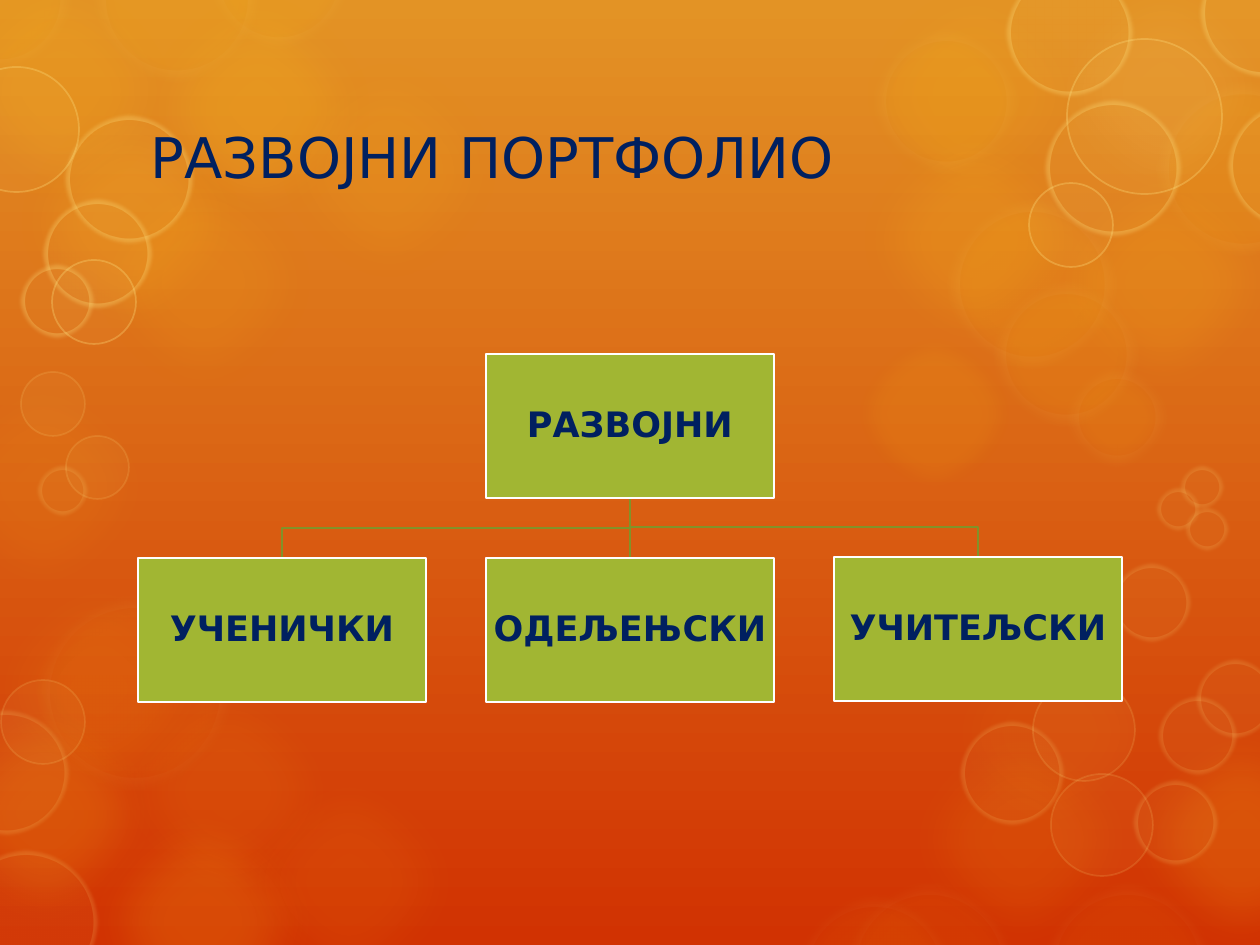
from lxml import etree
from pptx import Presentation
from pptx.dml.color import RGBColor
from pptx.enum.shapes import MSO_CONNECTOR, MSO_SHAPE
from pptx.enum.text import MSO_ANCHOR, MSO_AUTO_SIZE, PP_ALIGN
from pptx.oxml.ns import qn
from pptx.util import Pt

STRAIGHT = MSO_CONNECTOR.STRAIGHT
ELLIPSE, RECTANGLE = MSO_SHAPE.OVAL, MSO_SHAPE.RECTANGLE
LEFT, CENTER = PP_ALIGN.LEFT, PP_ALIGN.CENTER
MIDDLE = MSO_ANCHOR.MIDDLE
NO_AUTOFIT = MSO_AUTO_SIZE.NONE

PX = 7257  # EMU per pixel at 126 px to the inch
FONT = "DejaVu Sans"
NAVY, GREEN, OLIVE, WHITE = "002060", "A1B633", "819229", "FFFFFF"
AMBER, YELLOW, CREAM = "FDC61B", "FFE281", "FEEBAE"
rgb = RGBColor.from_string

GLOW = 263  # diameter of the large soft circles

# fill, fill opacity %, line, line width, line opacity %, soft edge in EMU,
# circles as (left, top, diameter)
BUBBLES = [
    (AMBER, 8, None, 0, 0, 317500,
     [(-32, 557, GLOW), (97, 660, GLOW), (218, 751, GLOW), (-88, 355, GLOW)]),
    (AMBER, 10, None, 0, 0, 317500,
     [(72, 151, GLOW), (258, 39, GLOW), (843, -37, GLOW), (890, 708, GLOW)]),
    (AMBER, 16, None, 0, 0, 317500,
     [(72, 790, GLOW), (1110, 708, GLOW), (-86, 682, GLOW)]),
    (AMBER, 14, None, 0, 0, 317500, [(-70, -41, GLOW)]),
    (AMBER, 20, None, 0, 0, 317500, [(127, -23, GLOW)]),
    (YELLOW, 10, None, 0, 0, 317500, [(1033, -41, GLOW)]),
    (AMBER, 15, None, 0, 0, 317500,
     [(0, 91, GLOW), (1033, 151, GLOW), (843, 108, GLOW)]),
    (AMBER, 5, None, 0, 0, 317500, [(919, 601, GLOW)]),
    (AMBER, 10, CREAM, 14, 6, 127000,
     [(1157, 82, 173), (874, 29, 144), (948, 200, 168), (994, 282, 144),
      (1067, 367, 100), (94, -83, 165), (207, -95, 144), (-72, -73, 144)]),
    (AMBER, 6, CREAM, 14, 4, 127000,
     [(38, 596, 193), (795, 895, 159), (844, 883, 171), (1043, 883, 169)]),
    (YELLOW, 5, YELLOW, 1, 15, 0,
     [(1, 680, 84), (1051, 774, 102), (1033, 679, 102), (21, 372, 64),
      (66, 436, 63)]),
    (YELLOW, 5, YELLOW, 1, 30, 0,
     [(-46, 67, 125), (52, 260, 84), (1067, 39, 155), (1029, 183, 84)]),
    (YELLOW, 5, YELLOW, 5, 15, 31750,
     [(-45, 851, 142), (-55, 711, 123), (961, 722, 102), (1134, 781, 83),
      (1113, 564, 77), (1159, 697, 77), (1197, 660, 77), (1181, 466, 42),
      (1157, 488, 42), (1186, 508, 42), (38, 466, 49)]),
    (YELLOW, 5, YELLOW, 5, 30, 31750,
     [(66, 116, 126), (44, 200, 107), (21, 265, 72), (1007, -30, 125),
      (1201, -50, 126), (1229, 103, 125), (1046, 101, 134)]),
    (AMBER, 10, None, 0, 0, 127000, [(850, 330, 168)]),
]


def set_opacity(fill, percent):
    color = fill._xPr.find(qn("a:solidFill"))[0]
    etree.SubElement(color, qn("a:alpha"), val=str(percent * 1000))


def add_run(paragraph, text, size, bold=False):
    run = paragraph.add_run()
    run.text = text
    run.font.name = FONT
    run.font.size = Pt(size)
    run.font.bold = bold
    run.font.color.rgb = rgb(NAVY)


prs = Presentation()
prs.slide_width, prs.slide_height = 1260 * PX, 945 * PX
layout = prs.slide_layouts[5]
slide = prs.slides.add_slide(layout)
shapes = slide.shapes

backdrop = slide.background.fill
backdrop.gradient()
backdrop.gradient_angle = 270
for stop, color in zip(backdrop.gradient_stops, ("E39325", "D13202")):
    stop.color.rgb = rgb(color)

# Bubbles belong to the layout, behind the slide's own content
bubble_id = 100
for fill, opacity, line, width, line_opacity, soft_edge, circles in BUBBLES:
    for left, top, size in circles:
        bubble = shapes.add_shape(ELLIPSE, left * PX, top * PX, size * PX, size * PX)
        bubble.fill.solid()
        bubble.fill.fore_color.rgb = rgb(fill)
        set_opacity(bubble.fill, opacity)
        if line:
            bubble.line.width = Pt(width)
            bubble.line.color.rgb = rgb(line)
            set_opacity(bubble.line.fill, line_opacity)
        else:
            bubble.line.fill.background()
        bubble.shadow.inherit = False
        if soft_edge:
            effects = bubble._element.spPr.find(qn("a:effectLst"))
            etree.SubElement(effects, qn("a:softEdge"), rad=str(soft_edge))
        bubble._element.nvSpPr.cNvPr.set("id", str(bubble_id))
        layout.shapes._spTree.append(bubble._element)
        bubble_id += 1

# Title
title = shapes.title
title.left, title.top, title.width, title.height = 138 * PX, 93 * PX, 982 * PX, 127 * PX
title.text_frame.auto_size = NO_AUTOFIT
title.text_frame.vertical_anchor = MIDDLE
heading = title.text_frame.paragraphs[0]
heading.alignment = LEFT
add_run(heading, "РАЗВОЈНИ ПОРТФОЛИО", 32)

# Hierarchy
BOX_W, BOX_H = 288, 144
COLUMN_LEFT, COLUMN_STEP = 138, 348
PARENT_TOP = 354
PARENT_X, PARENT_BOTTOM = 630, PARENT_TOP + BOX_H
CHILD_TOPS = (558, 558, 557)

for column in (2, 0):
    child_x = COLUMN_LEFT + column * COLUMN_STEP + BOX_W // 2
    child_top = CHILD_TOPS[column]
    bend_y = (PARENT_BOTTOM + child_top) // 2
    branch = shapes.build_freeform(PARENT_X, PARENT_BOTTOM, scale=PX)
    branch.add_line_segments(
        [(PARENT_X, bend_y), (child_x, bend_y), (child_x, child_top)], close=False)
    elbow = branch.convert_to_shape()
    elbow.fill.background()
    elbow.line.color.rgb = rgb(OLIVE)
    elbow.line.width = Pt(1.5)
    elbow.shadow.inherit = False

trunk = shapes.add_connector(
    STRAIGHT, PARENT_X * PX, PARENT_BOTTOM * PX, PARENT_X * PX, CHILD_TOPS[1] * PX)
trunk.line.color.rgb = rgb(OLIVE)
trunk.line.width = Pt(1.5)
etree.SubElement(trunk._element.spPr, qn("a:effectLst"))

portfolios = []
for name, column, top in [
    ("РАЗВОЈНИ", 1, PARENT_TOP),
    ("УЧЕНИЧКИ", 0, CHILD_TOPS[0]),
    ("ОДЕЉЕЊСКИ", 1, CHILD_TOPS[1]),
    ("УЧИТЕЉСКИ", 2, CHILD_TOPS[2]),
]:
    left = COLUMN_LEFT + column * COLUMN_STEP
    portfolio = shapes.add_shape(RECTANGLE, left * PX, top * PX, BOX_W * PX, BOX_H * PX)
    portfolio.fill.solid()
    portfolio.fill.fore_color.rgb = rgb(GREEN)
    portfolio.line.color.rgb = rgb(WHITE)
    portfolio.line.width = Pt(1.5)
    portfolio.shadow.inherit = False
    frame = portfolio.text_frame
    frame.margin_left = frame.margin_right = frame.margin_top = frame.margin_bottom = PX
    frame.word_wrap = True
    frame.vertical_anchor = MIDDLE
    label = frame.paragraphs[0]
    label.alignment = CENTER
    label.line_spacing = 0.9
    add_run(label, name, 20, bold=True)
    portfolios.append(portfolio)

trunk.begin_connect(portfolios[0], 2)
trunk.end_connect(portfolios[2], 0)

prs.save("out.pptx")
